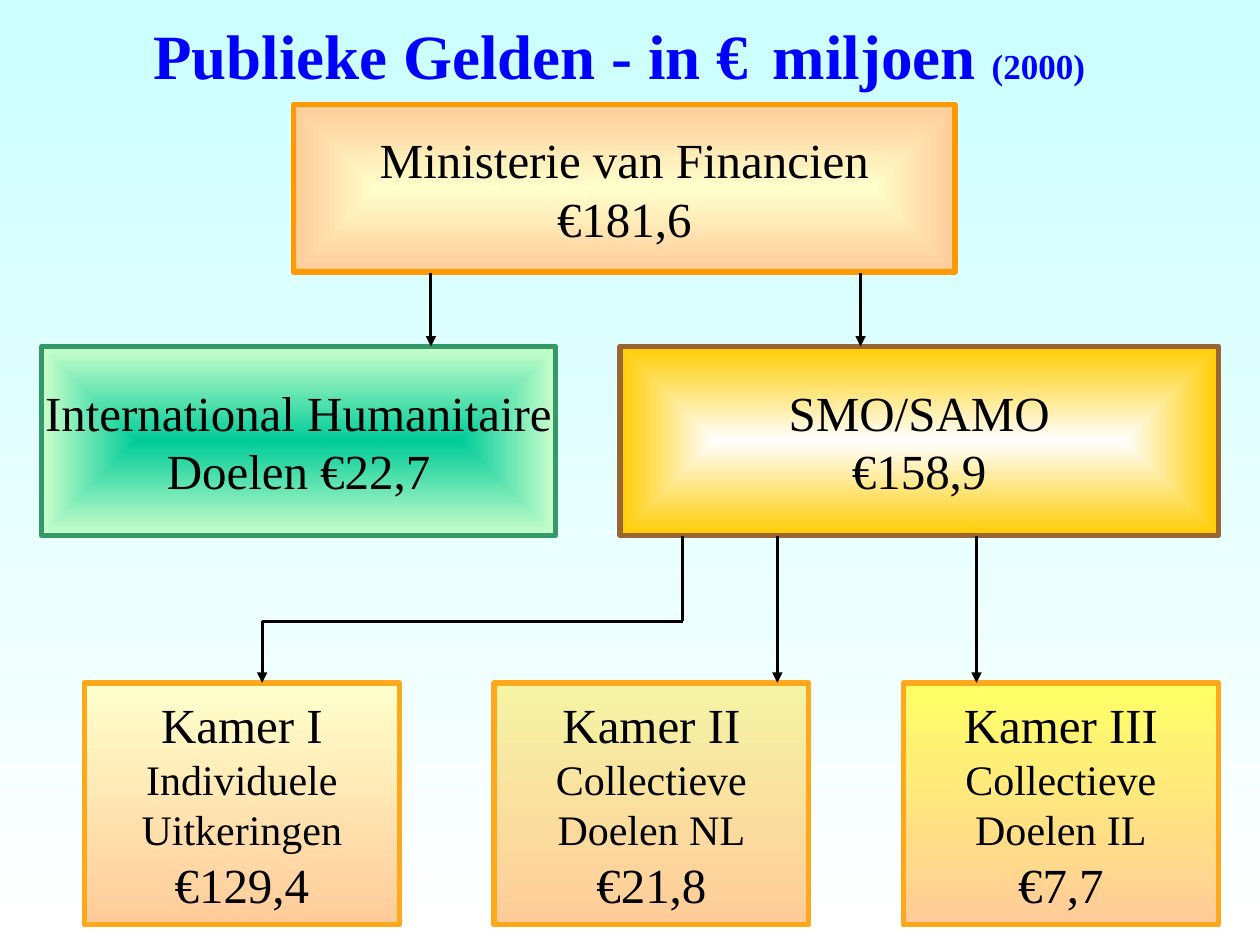
import pptx
import pptx.dml.color
import pptx.enum.shapes
import pptx.enum.text
import pptx.oxml
import pptx.oxml.ns
import pptx.util

Inches = pptx.util.Inches
RGBColor = pptx.dml.color.RGBColor
Align = pptx.enum.text.PP_ALIGN
Anchor = pptx.enum.text.MSO_ANCHOR
AutoSize = pptx.enum.text.MSO_AUTO_SIZE
qn = pptx.oxml.ns.qn
NAMESPACE = pptx.oxml.ns.nsdecls("a")

BLACK = RGBColor(0x00, 0x00, 0x00)
WHITE = RGBColor(0xFF, 0xFF, 0xFF)
BLUE = RGBColor(0x00, 0x00, 0xFF)
ICE = RGBColor(0xCC, 0xFF, 0xFF)
CREAM = RGBColor(0xFF, 0xFF, 0xCC)
PEACH = RGBColor(0xFF, 0xCC, 0x99)
ORANGE = RGBColor(0xFF, 0x99, 0x00)
AMBER = RGBColor(0xFE, 0xA8, 0x1C)
TEAL = RGBColor(0x00, 0xCC, 0x99)
MINT = RGBColor(0xCC, 0xFF, 0xCC)
GREEN = RGBColor(0x33, 0x99, 0x66)
GOLD = RGBColor(0xFF, 0xCC, 0x00)
BROWN = RGBColor(0x99, 0x66, 0x33)
KHAKI = RGBColor(0xF4, 0xF4, 0xA4)
YELLOW = RGBColor(0xFF, 0xFF, 0x66)


class FundsSlide:
    font_name = "Times New Roman"
    border_width = 3
    arrow_width = 1.75

    def __init__(self, deck):
        self.page = deck.slides.add_slide(deck.slide_layouts[6])

    def apply(self, target, values):
        for name, value in values.items():
            setattr(target, name, value)

    def gradient(self, fill, start, end):
        fill.gradient()
        fill.gradient_angle = 270
        for stop, colour in zip(fill.gradient_stops, (start, end)):
            stop.color.rgb = colour

    def background(self, start, end):
        self.gradient(self.page.background.fill, start, end)

    def centre_gradient(self, box):
        linear = next(box._element.iter(qn("a:lin")))
        centre = pptx.oxml.parse_xml(
            f'<a:path {NAMESPACE} path="shape">'
            '<a:fillToRect l="50000" t="50000" r="50000" b="50000"/></a:path>'
        )
        linear.getparent().replace(linear, centre)

    def span(self, para, text, size, colour=BLACK, bold=False):
        span = para.add_run()
        span.text = text
        self.apply(span.font, {
            "name": self.font_name, "size": pptx.util.Pt(size), "bold": bold,
        })
        span.font.color.rgb = colour
        return span

    def title(self, left, top, width, height):
        box = self.page.shapes.add_textbox(*map(Inches, (left, top, width, height)))
        self.apply(box.text_frame, {
            "word_wrap": True, "auto_size": AutoSize.SHAPE_TO_FIT_TEXT,
        })
        para = box.text_frame.paragraphs[0]
        para.alignment = Align.CENTER
        para._p.get_or_add_pPr().append(pptx.oxml.parse_xml(
            f'<a:spcBef {NAMESPACE}><a:spcPct val="50000"/></a:spcBef>'
        ))
        self.span(para, "Publieke Gelden - in €", 36, BLUE, True)
        gap = self.span(para, " ", 28)
        gap.font._element.set("spc", "700")
        self.span(para, "miljoen ", 36, BLUE, True)
        self.span(para, "(2000)", 20, BLUE, True)

    def box(self, place, start, end, border, lines, centred=False):
        box = self.page.shapes.add_shape(
            pptx.enum.shapes.MSO_SHAPE.RECTANGLE, *map(Inches, place)
        )
        box.shadow.inherit = False
        self.gradient(box.fill, start, end)
        if centred:
            self.centre_gradient(box)
        box.line.color.rgb = border
        box.line.width = pptx.util.Pt(self.border_width)
        frame = box.text_frame
        self.apply(frame, {"word_wrap": False, "vertical_anchor": Anchor.MIDDLE})
        for index, (text, size) in enumerate(lines):
            para = frame.add_paragraph() if index else frame.paragraphs[0]
            para.alignment = Align.CENTER
            self.span(para, text, size)

    def line(self, start, end, arrow=True):
        line = self.page.shapes.add_connector(
            pptx.enum.shapes.MSO_CONNECTOR.STRAIGHT, *map(Inches, start + end)
        )
        line.line.color.rgb = BLACK
        line.line.width = pptx.util.Pt(self.arrow_width)
        if arrow:
            line.line._get_or_add_ln().append(
                pptx.oxml.parse_xml(f'<a:tailEnd {NAMESPACE} type="triangle"/>')
            )
        line._element.spPr.append(pptx.oxml.parse_xml(f"<a:effectLst {NAMESPACE}/>"))


def main():
    deck = pptx.Presentation()
    deck.slide_width, deck.slide_height = Inches(10), Inches(7.5)
    slide = FundsSlide(deck)
    slide.background(ICE, WHITE)
    slide.title(0, 0.08, 9.83, 0.7)

    sources = [
        ((2.33, 0.83, 5.25, 1.33), CREAM, PEACH, ORANGE,
         "Ministerie van Financien", "€181,6"),
        ((0.33, 2.75, 4.08, 1.5), TEAL, MINT, GREEN,
         "International Humanitaire", "Doelen €22,7"),
        ((4.92, 2.75, 4.75, 1.5), WHITE, GOLD, BROWN, "SMO/SAMO", "€158,9"),
    ]
    for place, start, end, border, *texts in sources:
        lines = [(text, 28) for text in texts]
        slide.box(place, start, end, border, lines, centred=True)

    chambers = [
        (CREAM, "Kamer I", "Individuele", "Uitkeringen", "€129,4"),
        (KHAKI, "Kamer II", "Collectieve", "Doelen NL", "€21,8"),
        (YELLOW, "Kamer III", "Collectieve", "Doelen IL", "€7,7"),
    ]
    for index, (colour, *texts) in enumerate(chambers):
        place = (0.67 + index * 3.25, 5.42, 2.5, 1.92)
        slide.box(place, colour, PEACH, AMBER, list(zip(texts, (28, 24, 24, 28))))

    for x in (3.42, 6.83):
        slide.line((x, 2.17), (x, 2.75))
    bend = [(5.42, 4.25), (5.42, 4.93), (2.08, 4.93), (2.08, 5.42)]
    for start, end in zip(bend, bend[1:]):
        slide.line(start, end, arrow=end == bend[-1])
    for x in (6.17, 7.75):
        slide.line((x, 4.25), (x, 5.42))

    deck.save("out.pptx")


if __name__ == "__main__":
    main()
